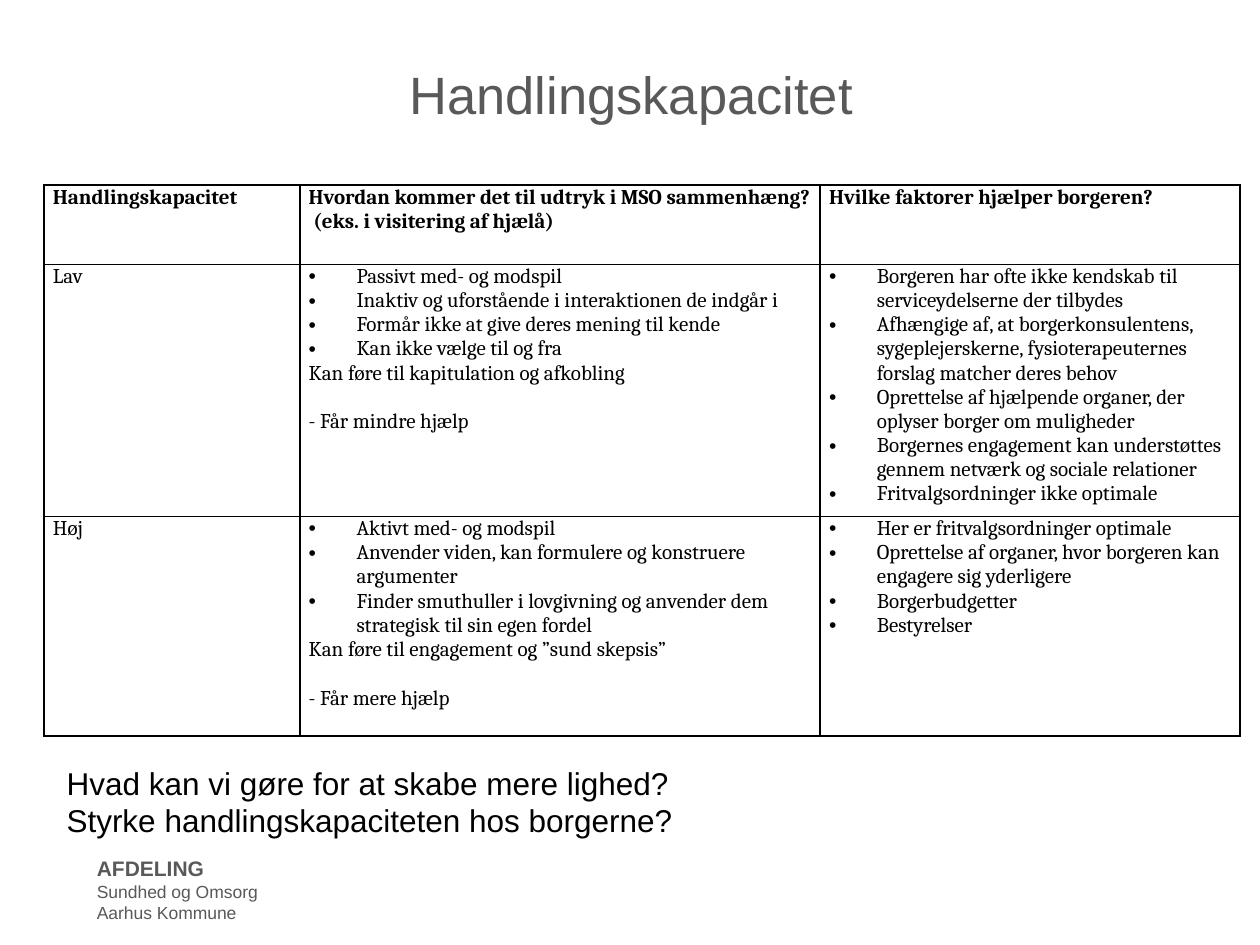
from dataclasses import dataclass

from lxml import etree
from pptx import Presentation
from pptx.dml.color import RGBColor
from pptx.enum.text import MSO_ANCHOR, PP_ALIGN
from pptx.oxml.ns import qn
from pptx.util import Inches, Pt

CENTER = PP_ALIGN.CENTER
MIDDLE = MSO_ANCHOR.MIDDLE
BULLET = "•"
BORDER_SIDES = ("a:lnL", "a:lnR", "a:lnT", "a:lnB")

HEADINGS = [
    "Handlingskapacitet",
    "Hvordan kommer det til udtryk i MSO sammenhæng?\v (eks. i visitering af hjælå)",
    "Hvilke faktorer hjælper borgeren?",
]
LOW = [
    "Lav",
    "• Passivt med- og modspil\n"
    "• Inaktiv og uforstående i interaktionen de indgår i\n"
    "• Formår ikke at give deres mening til kende\n"
    "• Kan ikke vælge til og fra\n"
    "Kan føre til kapitulation og afkobling\n"
    "- Får mindre hjælp",
    "• Borgeren har ofte ikke kendskab til serviceydelserne der tilbydes\n"
    "• Afhængige af, at borgerkonsulentens, sygeplejerskerne, "
    "fysioterapeuternes forslag matcher deres behov\n"
    "• Oprettelse af hjælpende organer, der oplyser borger om muligheder\n"
    "• Borgernes engagement kan understøttes gennem netværk og sociale relationer\n"
    "• Fritvalgsordninger ikke optimale",
]
HIGH = [
    "Høj",
    "• Aktivt med- og modspil\n"
    "• Anvender viden, kan formulere og konstruere argumenter\n"
    "• Finder smuthuller i lovgivning og anvender dem strategisk til sin egen fordel\n"
    "Kan føre til engagement og ”sund skepsis”\n"
    "- Får mere hjælp",
    "• Her er fritvalgsordninger optimale\n"
    "• Oprettelse af organer, hvor borgeren kan engagere sig yderligere\n"
    "• Borgerbudgetter\n"
    "• Bestyrelser",
]


@dataclass(frozen=True)
class Theme:
    sans: str = "Arial"
    serif: str = "Cambria"
    ink: str = "000000"
    grey: str = "595959"
    title: int = 30
    question: int = 18
    body: int = 12
    small: int = 10


class SlideBuilder:
    """Adds styled elements to one title-only slide."""

    def __init__(self, presentation, theme):
        self.theme = theme
        self.slide = presentation.slides.add_slide(presentation.slide_layouts[5])

    def style(self, paragraph, size, font, color, bold=False):
        for run in paragraph.runs:
            run.font.name = font
            run.font.size = Pt(size)
            run.font.bold = bold
            run.font.color.rgb = RGBColor.from_string(color)

    def title(self, wording, left, top, width, height):
        heading = self.slide.shapes.title
        heading.left, heading.top = Inches(left), Inches(top)
        heading.width, heading.height = Inches(width), Inches(height)
        frame = heading.text_frame
        frame.text = wording
        frame.vertical_anchor = MIDDLE
        paragraph = frame.paragraphs[0]
        paragraph.alignment = CENTER
        self.style(paragraph, self.theme.title, self.theme.sans, self.theme.grey)

    def text(self, lines, left, top, width, height, color, inset_top=0.05):
        box = self.slide.shapes.add_textbox(
            Inches(left), Inches(top), Inches(width), Inches(height))
        frame = box.text_frame
        frame.word_wrap = True
        frame.margin_top = Inches(inset_top)
        frame.text = "\n".join(wording for wording, _, _ in lines)
        for paragraph, (_, size, bold) in zip(frame.paragraphs, lines):
            self.style(paragraph, size, self.theme.sans, color, bold)

    def table(self, rows, left, top, widths, heights):
        table = self.slide.shapes.add_table(
            len(rows), len(widths), Inches(left), Inches(top),
            Inches(sum(widths)), Inches(sum(heights))).table
        table.first_row = table.horz_banding = False
        for column, width in zip(table.columns, widths):
            column.width = Inches(width)
        for row, height in zip(table.rows, heights):
            row.height = Inches(height)
        for row_index, entries in enumerate(rows):
            for column_index, entry in enumerate(entries):
                self.cell(table.cell(row_index, column_index), entry, row_index == 0)

    def cell(self, cell, entry, bold):
        cell.margin_left = cell.margin_right = Inches(0.07)
        cell.margin_top = cell.margin_bottom = 0
        self.borders(cell)
        cell.fill.background()
        lines = entry.split("\n")
        cell.text_frame.text = "\n".join(line.removeprefix("• ") for line in lines)
        for paragraph, line in zip(cell.text_frame.paragraphs, lines):
            if line.startswith(BULLET):
                self.bullet(paragraph)
            elif line.startswith("-"):
                paragraph.space_before = Pt(14)
            self.style(paragraph, self.theme.body, self.theme.serif, self.theme.ink, bold)

    def borders(self, cell):
        properties = cell._tc.get_or_add_tcPr()
        for side in BORDER_SIDES:
            line = etree.SubElement(properties, qn(side), w=str(Pt(1)))
            fill = etree.SubElement(line, qn("a:solidFill"))
            etree.SubElement(fill, qn("a:srgbClr"), val=self.theme.ink)

    def bullet(self, paragraph):
        properties = paragraph._p.get_or_add_pPr()
        properties.set("marL", str(Inches(0.38)))
        properties.set("indent", str(Inches(-0.38)))
        etree.SubElement(properties, qn("a:buFont"), typeface=self.theme.sans)
        etree.SubElement(properties, qn("a:buChar"), char=BULLET)


def main():
    presentation = Presentation()
    presentation.slide_width, presentation.slide_height = Inches(10), Inches(7.5)
    theme = Theme()
    builder = SlideBuilder(presentation, theme)
    builder.text(
        [("AFDELING", theme.body, True),
         ("Sundhed og Omsorg", theme.small, False),
         ("Aarhus Kommune", theme.small, False)],
        0.67, 6.74, 2.05, 0.64, theme.grey)
    builder.title("Handlingskapacitet", 1.46, 0.36, 7.1, 0.77)
    builder.table([HEADINGS, LOW, HIGH], 0.35, 1.47,
                  widths=[2.03, 4.13, 3.33], heights=[0.63, 1.92, 1.74])
    builder.text(
        [("Hvad kan vi gøre for at skabe mere lighed?", theme.question, False),
         ("Styrke handlingskapaciteten hos borgerne?", theme.question, False)],
        0.43, 5.72, 9.21, 1.31, theme.ink, inset_top=0.34)
    presentation.save("out.pptx")


if __name__ == "__main__":
    main()
